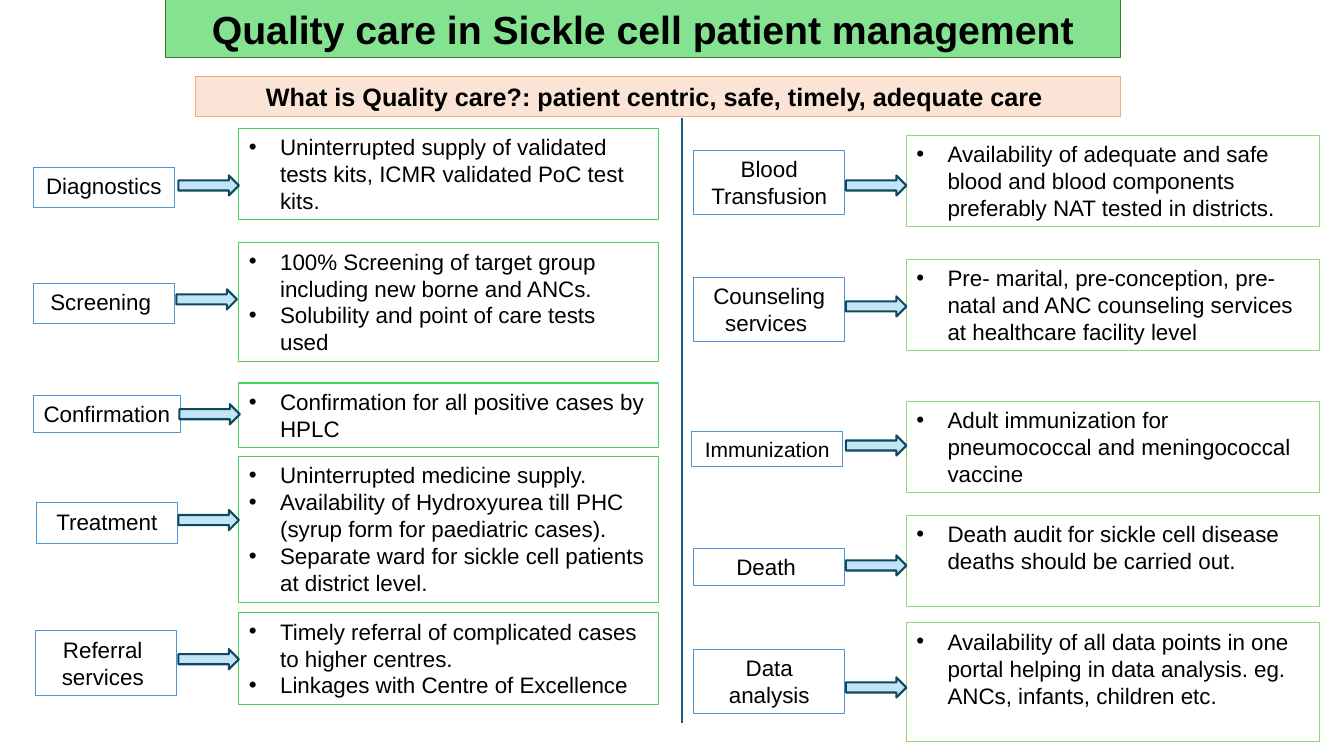
"""Build the slide on quality care in sickle cell patient management."""
from typing import NamedTuple

from lxml.etree import SubElement
from pptx import Presentation
from pptx.dml.color import RGBColor
from pptx.enum.shapes import MSO_CONNECTOR as Connector, MSO_SHAPE as Shape
from pptx.enum.text import MSO_ANCHOR as Anchor, PP_ALIGN as Align
from pptx.oxml.ns import qn
from pptx.util import Inches, Pt

COLOURS = {
    "text": "000000",
    "title_fill": "84E291",
    "title_line": "3B7D23",
    "banner_fill": "FBE3D6",
    "banner_line": "F2AA84",
    "label_line": "4E95D9",
    "left_line": "47D45A",
    "right_line": "8ED973",
    "divider": "156082",
    "arrow_fill": "C1E5F5",
    "arrow_line": "104760",
}
FONT = "Arial"
BULLET_INDENT = Inches(0.31)
ARROW_SIZE = (0.6, 0.2)


class Column(NamedTuple):
    """Left edge, width and outline colour of a column of detail boxes."""
    left: float
    width: float
    line: str


class Topic(NamedTuple):
    """A label, its details and the places of label, detail box and arrow."""
    label: list
    label_box: tuple
    details: list
    details_top: float
    details_height: float
    arrow_at: tuple
    label_size: int = 16


LEFT = Column(2.37, 4.16, "left_line")
RIGHT = Column(8.99, 4.1, "right_line")

TOPICS = {
    LEFT: [
        Topic(["Diagnostics"], (0.33, 1.66, 1.4, 0.4),
              ["Uninterrupted supply of validated tests kits, ICMR validated PoC test kits."],
              1.27, 0.91, (1.77, 1.74)),
        Topic(["Screening "], (0.33, 2.81, 1.4, 0.4),
              ["100% Screening of target group including new borne and ANCs.",
               "Solubility and point of care tests used"],
              2.41, 1.18, (1.75, 2.87)),
        Topic(["Confirmation "], (0.33, 3.92, 1.46, 0.37),
              ["Confirmation for all positive cases by HPLC"],
              3.8, 0.64, (1.78, 4.01)),
        Topic(["Treatment"], (0.36, 4.99, 1.4, 0.4),
              ["Uninterrupted medicine supply.",
               "Availability of Hydroxyurea till PHC (syrup form for paediatric cases).",
               "Separate ward for sickle cell patients at district level."],
              4.53, 1.45, (1.77, 5.06)),
        Topic(["Referral ", "services "], (0.35, 6.26, 1.4, 0.64),
              ["Timely referral of complicated cases to higher centres.",
               "Linkages with Centre of Excellence"],
              6.08, 0.91, (1.77, 6.44)),
    ],
    RIGHT: [
        Topic(["Blood Transfusion"], (6.88, 1.49, 1.5, 0.64),
              ["Availability of adequate and safe blood and blood components "
               "preferably NAT tested in districts."],
              1.34, 0.91, (8.39, 1.74)),
        Topic(["Counseling services "], (6.88, 2.75, 1.5, 0.64),
              ["Pre- marital, pre-conception, pre-natal and ANC counseling services "
               "at healthcare facility level"],
              2.57, 0.91, (8.39, 2.94)),
        Topic(["Immunization"], (6.86, 4.28, 1.5, 0.35),
              ["Adult immunization for pneumococcal and meningococcal vaccine"],
              3.98, 0.91, (8.39, 4.32), 15),
        Topic(["Death "], (6.88, 5.44, 1.5, 0.37),
              ["Death audit for sickle cell disease deaths should be carried out."],
              5.11, 0.91, (8.39, 5.51)),
        Topic(["Data analysis"], (6.88, 6.44, 1.5, 0.64),
              ["Availability of all data points in one portal helping in data analysis. "
               "eg. ANCs, infants, children etc."],
              6.18, 1.18, (8.39, 6.72)),
    ],
}


def colour(name):
    """Return the named colour."""
    return RGBColor.from_string(COLOURS[name])


def add_shape(slide, kind, box, line, fill=None, line_width=0.75):
    """Add a preset shape with an outline and an optional fill."""
    shape = slide.shapes.add_shape(kind, *map(Inches, box))
    shape.shadow.inherit = False
    if fill:
        shape.fill.solid()
        shape.fill.fore_color.rgb = colour(fill)
    else:
        shape.fill.background()
    shape.line.color.rgb = colour(line)
    shape.line.width = Pt(line_width)
    return shape


def add_bullet(paragraph):
    """Give a paragraph a hanging bullet."""
    properties = paragraph._p.get_or_add_pPr()
    properties.set("marL", str(BULLET_INDENT))
    properties.set("indent", str(-BULLET_INDENT))
    SubElement(properties, qn("a:buFont"), typeface=FONT)
    SubElement(properties, qn("a:buChar"), char="•")


def add_text_box(slide, box, lines, line, fill=None, size=16, bold=False,
                 bulleted=False, anchor=Anchor.TOP):
    """Add an outlined rectangle holding one paragraph per line of text."""
    shape = add_shape(slide, Shape.RECTANGLE, box, line, fill)
    frame = shape.text_frame
    frame.word_wrap = True
    frame.vertical_anchor = anchor
    frame.text = "\n".join(lines)
    for paragraph in frame.paragraphs:
        paragraph.alignment = Align.LEFT if bulleted else Align.CENTER
        paragraph.font.name = FONT
        paragraph.font.size = Pt(size)
        paragraph.font.bold = bold
        paragraph.font.color.rgb = colour("text")
        if bulleted:
            add_bullet(paragraph)


def add_divider(slide, x, top, bottom):
    """Add the vertical line between the two columns."""
    divider = slide.shapes.add_connector(
        Connector.STRAIGHT, Inches(x), Inches(top), Inches(x), Inches(bottom))
    divider.line.color.rgb = colour("divider")
    divider.line.width = Pt(1.5)
    SubElement(divider._element.spPr, qn("a:effectLst"))


def add_topic(slide, topic, column):
    """Add a topic's label, its details and the arrow between them."""
    add_text_box(slide, topic.label_box, topic.label, "label_line", size=topic.label_size)
    details_box = (column.left, topic.details_top, column.width, topic.details_height)
    add_text_box(slide, details_box, topic.details, column.line, bulleted=True)
    add_shape(slide, Shape.RIGHT_ARROW, topic.arrow_at + ARROW_SIZE,
              "arrow_line", "arrow_fill", 1.5)


def main():
    """Build and save the presentation."""
    presentation = Presentation()
    presentation.slide_width = Inches(13.33)
    presentation.slide_height = Inches(7.5)
    slide = presentation.slides.add_slide(presentation.slide_layouts[6])
    add_text_box(slide, (1.64, 0, 9.47, 0.57),
                 ["Quality care in Sickle cell patient management"],
                 "title_line", "title_fill", 28, True, anchor=Anchor.MIDDLE)
    add_text_box(slide, (1.94, 0.76, 9.17, 0.4),
                 ["What is Quality care?: patient centric, safe, timely, adequate care "],
                 "banner_line", "banner_fill", 18, True)
    add_divider(slide, 6.76, 1.17, 7.17)
    for column, topics in TOPICS.items():
        for topic in topics:
            add_topic(slide, topic, column)
    presentation.save("out.pptx")


if __name__ == "__main__":
    main()
